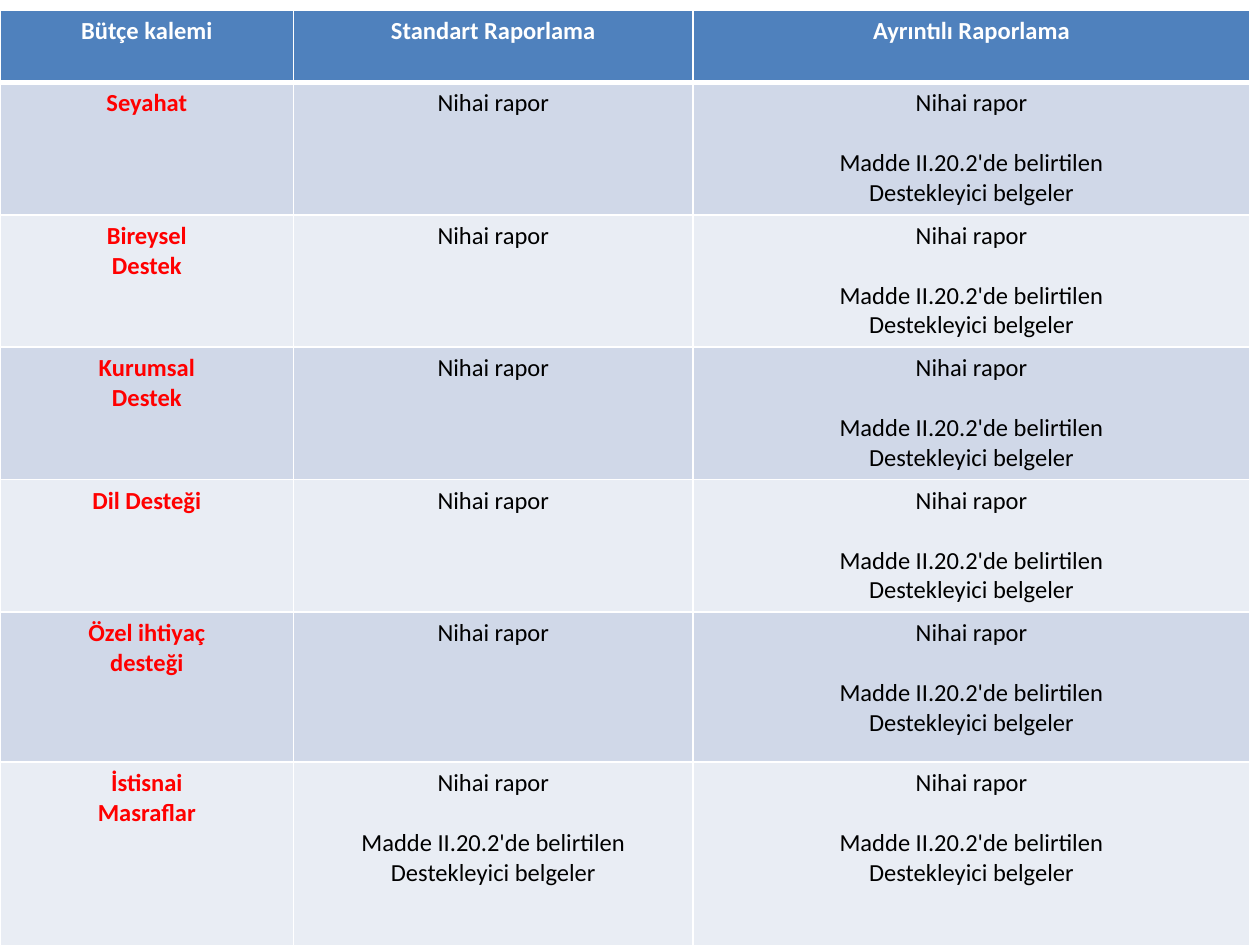
from lxml import etree
from pptx import Presentation
from pptx import util as u
from pptx.dml.color import RGBColor
from pptx.enum import text
from pptx.oxml import ns

WHITE = RGBColor(0xFF, 0xFF, 0xFF)
BLACK = RGBColor(0, 0, 0)
RED = RGBColor(0xFF, 0, 0)
HEADER_BLUE = RGBColor(0x4F, 0x81, 0xBD)
BANDS = [RGBColor(0xE9, 0xED, 0xF4), RGBColor(0xD0, 0xD8, 0xE8)]

REPORT = ["Nihai rapor"]
REPORT_WITH_DOCUMENTS = REPORT + ["Madde II.20.2'de belirtilen", "Destekleyici belgeler"]
LINE_GAP = u.Pt(17.1)  # one line of 14 pt Calibri

HEADINGS = [["Bütçe kalemi"], ["Standart Raporlama"], ["Ayrıntılı Raporlama"]]
BUDGET_ITEMS = [
    (["Seyahat"], REPORT),
    (["Bireysel", "Destek"], REPORT),
    (["Kurumsal", "Destek"], REPORT),
    (["Dil Desteği"], REPORT),
    (["Özel ihtiyaç", "desteği"], REPORT),
    (["İstisnai", "Masraflar"], REPORT_WITH_DOCUMENTS),
]
rows = [HEADINGS] + [[item, standard, REPORT_WITH_DOCUMENTS] for item, standard in BUDGET_ITEMS]
column_widths = [5.92, 8.05, 11.23]
row_heights = [1.46] + [2.67] * 4 + [3.02, 3.81]


def add_border(cell, side, points):
    line = etree.SubElement(cell._tc.get_or_add_tcPr(), ns.qn(f"a:ln{side}"), w=str(u.Pt(points)))
    fill = etree.SubElement(line, ns.qn("a:solidFill"))
    etree.SubElement(fill, ns.qn("a:srgbClr"), val=str(WHITE))


deck = Presentation()
deck.slide_width, deck.slide_height = u.Cm(25.4), u.Cm(19.05)
slide = deck.slides.add_slide(deck.slide_layouts[6])

# Reporting table
reporting = slide.shapes.add_table(
    len(rows), len(column_widths), u.Cm(0), u.Cm(0.2),
    u.Cm(sum(column_widths)), u.Cm(sum(row_heights))).table
for column, width in zip(reporting.columns, column_widths):
    column.width = u.Cm(width)
for row, height in zip(reporting.rows, row_heights):
    row.height = u.Cm(height)

# Cells: borders first, then fill and text
for r, contents in enumerate(rows):
    for c, lines in enumerate(contents):
        cell = reporting.cell(r, c)
        for side in "LRTB":
            header_edge = (r, side) in [(0, "B"), (1, "T")]
            add_border(cell, side, 3 if header_edge else 1)
        cell.fill.solid()
        cell.fill.fore_color.rgb = BANDS[r % 2] if r else HEADER_BLUE

        font_format = {"name": "Calibri", "size": u.Pt(14), "bold": r == 0 or c == 0}
        colour = WHITE if r == 0 else RED if c == 0 else BLACK
        for n, line in enumerate(lines):
            paragraph = cell.text_frame.paragraphs[0] if n == 0 else cell.text_frame.add_paragraph()
            paragraph.alignment = text.PP_ALIGN.CENTER
            if n == 1 and c > 0:
                paragraph.space_before = LINE_GAP
            run = paragraph.add_run()
            run.text = line
            for attribute, value in font_format.items():
                setattr(run.font, attribute, value)
            run.font.color.rgb = colour

deck.save("out.pptx")
